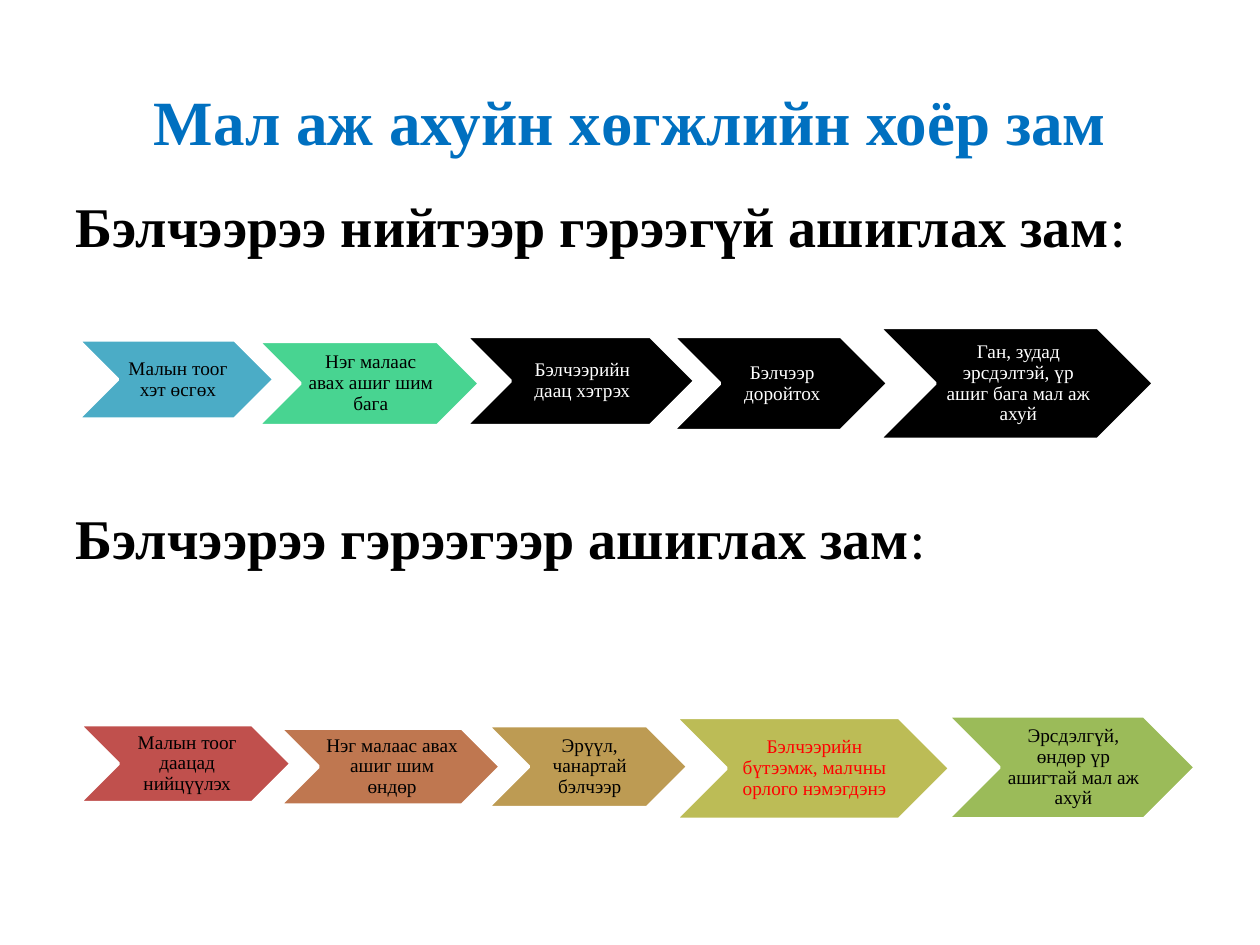
from dataclasses import dataclass

from lxml.etree import SubElement
from pptx import Presentation
from pptx.dml.color import RGBColor
from pptx.enum.shapes import MSO_SHAPE
from pptx.enum.text import MSO_ANCHOR, MSO_AUTO_SIZE, PP_ALIGN
from pptx.oxml.ns import qn
from pptx.util import Cm, Pt


@dataclass(frozen=True)
class Theme:
    serif: str = "Times New Roman"
    sans: str = "Calibri"
    title_size: int = 36
    heading_size: int = 32
    step_size: int = 11
    title: str = "0070C0"
    black: str = "000000"
    white: str = "FFFFFF"
    red: str = "FF0000"
    teal: str = "4BACC6"
    mint: str = "48D491"
    brick: str = "C0504D"
    copper: str = "BF7750"
    ochre: str = "BD9B53"
    olive: str = "BCBC56"
    green: str = "9BBB59"


THEME = Theme()
TITLE = "Мал аж ахуйн хөгжлийн хоёр зам"
HEADINGS = ["Бэлчээрээ нийтээр гэрээгүй ашиглах зам",
            "Бэлчээрээ гэрээгээр ашиглах зам"]

# Each step: offset in its box and size (cm), fill, text colour, text
OPEN_USE = [
    (0, 0.25, 3.96, 1.6, THEME.teal, THEME.black, "Малын тоог хэт өсгөх"),
    (3.63, 0.28, 4.47, 1.7, THEME.mint, THEME.black,
     "Нэг малаас авах ашиг шим бага"),
    (7.82, 0.18, 4.62, 1.8, THEME.black, THEME.white,
     "Бэлчээрийн даац хэтрэх"),
    (11.99, 0.18, 4.34, 1.9, THEME.black, THEME.white, "Бэлчээр доройтох"),
    (16.15, 0, 5.54, 2.26, THEME.black, THEME.white,
     "Ган, зудад эрсдэлтэй, үр ашиг бага мал аж ахуй"),
]
CONTRACT_USE = [
    (0, 0.18, 4.27, 1.57, THEME.brick, THEME.black,
     "Малын тоог даацад нийцүүлэх"),
    (4.04, 0.25, 4.45, 1.55, THEME.copper, THEME.black,
     "Нэг малаас авах ашиг шим өндөр"),
    (8.23, 0.2, 4.04, 1.65, THEME.ochre, THEME.black,
     "Эрүүл, чанартай бэлчээр"),
    (12.01, 0.03, 5.54, 2.06, THEME.olive, THEME.red,
     "Бэлчээрийн бүтээмж, малчны орлого нэмэгдэнэ"),
    (17.5, 0, 5, 2.08, THEME.green, THEME.black,
     "Эрсдэлгүй, өндөр үр ашигтай мал аж ахуй"),
]


def apply(target, **values):
    for name, value in values.items():
        setattr(target, name, value)


def add_span(para, text, size, color, font=THEME.serif, bold=False):
    span = para.add_run()
    span.text = text
    apply(span.font, name=font, size=Pt(size), bold=bold)
    span.font.color.rgb = RGBColor.from_string(color)


def place(shape, left, top, width, height):
    apply(shape, left=Cm(left), top=Cm(top), width=Cm(width), height=Cm(height))


def fill_title(shape, box):
    place(shape, *box)
    apply(shape.text_frame, vertical_anchor=MSO_ANCHOR.MIDDLE,
          auto_size=MSO_AUTO_SIZE.NONE)
    para = shape.text_frame.paragraphs[0]
    para.alignment = PP_ALIGN.CENTER
    add_span(para, TITLE, THEME.title_size, THEME.title, bold=True)


def fill_headings(shape, box):
    place(shape, *box)
    frame = shape.text_frame
    frame.auto_size = MSO_AUTO_SIZE.NONE
    # The wide gap before the second heading leaves room for the first chain
    for index, (heading, gap) in enumerate(zip(HEADINGS, (6.4, 140))):
        para = frame.add_paragraph() if index else frame.paragraphs[0]
        para.space_before = Pt(gap)
        properties = para._p.get_or_add_pPr()
        properties.set("marL", str(Cm(1.42)))
        properties.set("indent", str(Cm(-1.42)))
        SubElement(properties, qn("a:buNone"))
        add_span(para, heading, THEME.heading_size, THEME.black, bold=True)
        add_span(para, ":", THEME.heading_size, THEME.black, THEME.sans)


def add_chain(page, left, top, steps):
    for across, down, width, height, fill, color, text in steps:
        step = page.shapes.add_shape(
            MSO_SHAPE.CHEVRON, Cm(left + across), Cm(top + down),
            Cm(width), Cm(height))
        step.shadow.inherit = False
        step.fill.solid()
        step.fill.fore_color.rgb = RGBColor.from_string(fill)
        step.line.color.rgb = RGBColor.from_string(THEME.white)
        step.line.width = Pt(2)
        frame = step.text_frame
        apply(frame, word_wrap=True, vertical_anchor=MSO_ANCHOR.MIDDLE,
              margin_left=Cm(0.12), margin_right=Cm(0.04),
              margin_top=Cm(0.04), margin_bottom=Cm(0.04))
        para = frame.paragraphs[0]
        apply(para, alignment=PP_ALIGN.CENTER, line_spacing=0.9)
        add_span(para, text, THEME.step_size, color)


def main():
    deck = Presentation()
    apply(deck, slide_width=Cm(25.4), slide_height=Cm(19.05))
    page = deck.slides.add_slide(deck.slide_layouts.get_by_name("Title and Content"))

    # Title and the two path headings
    fill_title(page.shapes.title, (1.27, 0.76, 22.86, 3.35))
    fill_headings(page.placeholders[1], (1.27, 3.73, 22.86, 14))

    # One chain of steps under each heading
    add_chain(page, 1.57, 6.6, OPEN_USE)
    add_chain(page, 1.6, 14.43, CONTRACT_USE)

    deck.save("out.pptx")


if __name__ == "__main__":
    main()
